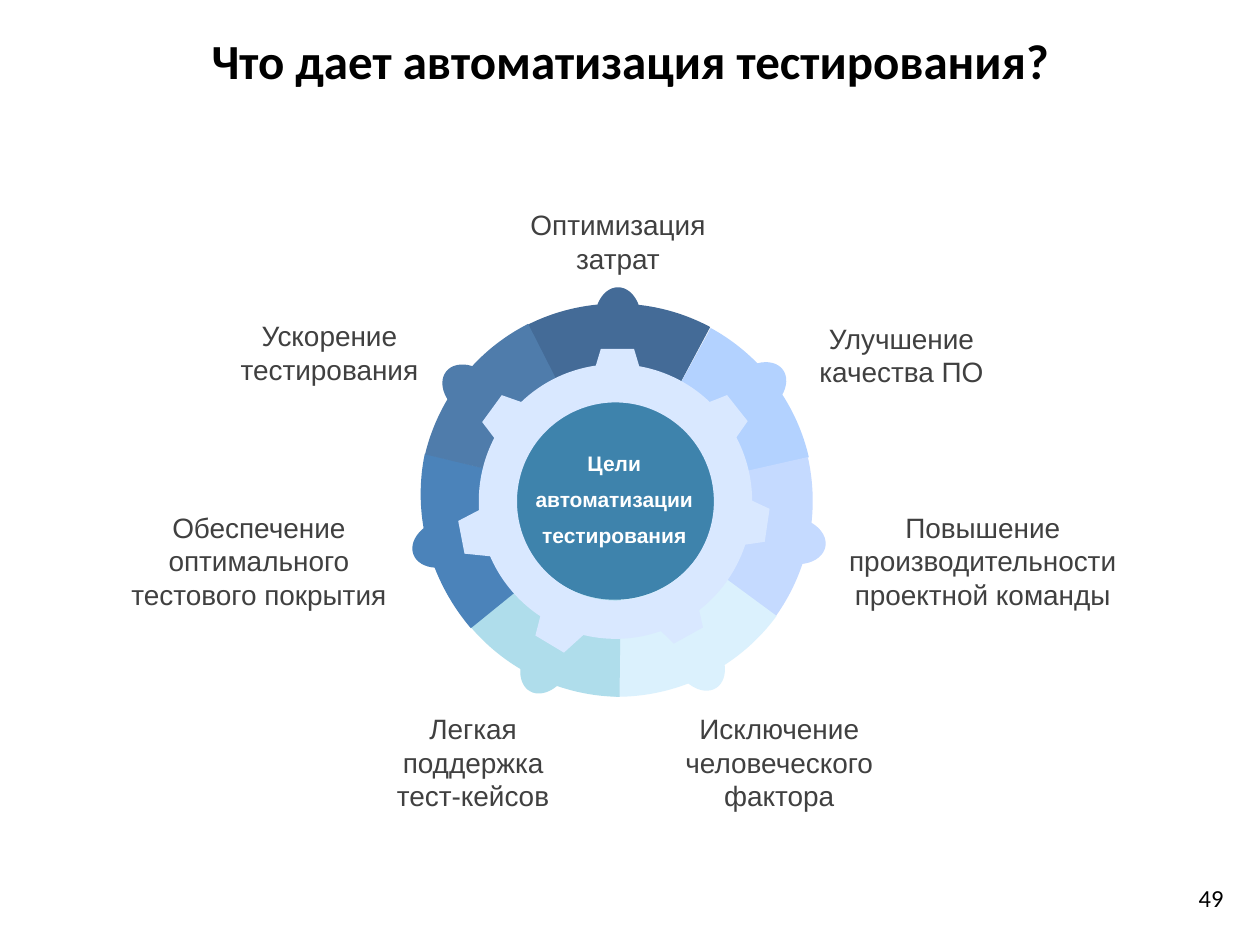
import collections

import pptx
import pptx.dml.color
import pptx.enum.shapes
import pptx.enum.text
import pptx.util

Inches = pptx.util.Inches
Pt = pptx.util.Pt
SHAPE = pptx.enum.shapes.MSO_SHAPE
ALIGN = pptx.enum.text.PP_ALIGN
ANCHOR = pptx.enum.text.MSO_ANCHOR
AUTO_SIZE = pptx.enum.text.MSO_AUTO_SIZE

Segment = collections.namedtuple(
    "Segment", "colour knob slice_box slice_angles tooth label label_box")

SEGMENTS = [
    Segment("446B97", (4.72, 2.28, 0), (3.32, 2.41, 3.15, 3.15, 22.6), (220.01, 275.49),
            (4.69, 2.77, 0), "Оптимизация затрат", (4.02, 1.6, 1.77, 0.64)),
    Segment("B3D2FF", (5.82, 2.83, 52.9), (3.31, 2.41, 3.15, 3.15, 85.3), (213.36, 261.63),
            (5.54, 3.19, 51.6), "Улучшение\nкачества ПО", (6.27, 2.5, 1.77, 0.64)),
    Segment("C5DAFF", (6.11, 4.03, 100.9), (3.3, 2.4, 3.15, 3.15, 133.9), (213.36, 261.63),
            (5.75, 4.02, 98.4), "Повышение\nпроизводительности\nпроектной команды",
            (6.5, 4, 2.6, 0.91)),
    Segment("DBF1FD", (5.36, 4.98, 148.4), (3.32, 2.38, 3.15, 3.15, 189.9), (206.44, 260.99),
            (5.19, 4.8, 151), "Исключение\nчеловеческого фактора", (5.3, 5.6, 1.77, 0.91)),
    Segment("AFDDEB", (4.15, 5, 209.7), (3.36, 2.38, 3.15, 3.15, 254.7), (195.94, 244.75),
            (4.22, 4.87, 211), "Легкая поддержка\nтест-кейсов", (2.87, 5.6, 1.77, 0.91)),
    Segment("4B83BA", (3.34, 4.05, 249.9), (3.39, 2.34, 3.15, 3.3, 305), (195.94, 248.75),
            (3.58, 4.11, 259.1), "Обеспечение\nоптимального\nтестового покрытия",
            (0.91, 4, 2.29, 0.91)),
    Segment("4F7CAB", (3.56, 2.85, 308.6), (3.33, 2.4, 3.15, 3.15, 350.6), (202.96, 252.47),
            (3.8, 3.19, 306.1), "Ускорение\nтестирования", (1.73, 2.48, 1.77, 0.64)),
]
GEAR_COLOUR = "D9E8FF"
CORE_COLOUR = "3E83AC"
KNOB_SIZE = (0.37, 0.52)
TOOTH_SIZE = (0.42, 0.26)
ADJUSTMENT_PER_DEGREE = 0.6

TITLE_FONT = {"name": "Calibri", "size": Pt(28), "bold": True}
NUMBER_FONT = {"name": "Calibri", "size": Pt(14)}
CORE_FONT = {"name": "Arial", "size": Pt(12), "bold": True}
LABEL_FONT = {"name": "Arial", "size": Pt(16)}


def rgb(colour):
    return pptx.dml.color.RGBColor.from_string(colour)


def set_attributes(target, values):
    for name, value in values.items():
        setattr(target, name, value)


def write_text(text_frame, lines, font, colour, first=None, following=None):
    for index, line in enumerate(lines):
        paragraph = text_frame.add_paragraph() if index else text_frame.paragraphs[0]
        paragraph.text = line
        paragraph.alignment = ALIGN.CENTER
        set_attributes(paragraph, (following if index else first) or {})
        for run in paragraph.runs:
            set_attributes(run.font, font)
            run.font.color.rgb = rgb(colour)


def add_text(shapes, box, lines, font, colour, first=None, following=None):
    shape = shapes.add_textbox(*map(Inches, box))
    set_attributes(shape.text_frame,
                   {"word_wrap": True, "auto_size": AUTO_SIZE.SHAPE_TO_FIT_TEXT})
    write_text(shape.text_frame, lines, font, colour, first, following)


def add_part(shapes, kind, box, colour, rotation=0, adjustments=()):
    shape = shapes.add_shape(kind, *map(Inches, box))
    shape.shadow.inherit = False
    shape.rotation = rotation
    shape.fill.solid()
    shape.fill.fore_color.rgb = rgb(colour)
    shape.line.fill.background()
    for index, value in enumerate(adjustments):
        shape.adjustments[index] = value


def add_title(slide):
    title = slide.shapes.title
    set_attributes(title, {"left": Inches(0), "top": Inches(0.02),
                           "width": Inches(10), "height": Inches(1)})
    set_attributes(title.text_frame, {"word_wrap": True, "auto_size": AUTO_SIZE.NONE,
                                      "vertical_anchor": ANCHOR.MIDDLE})
    write_text(title.text_frame, ["Что дает автоматизация тестирования?"],
               TITLE_FONT, "000000", {"line_spacing": 0.8})


def add_wheel(slide):
    shapes = slide.shapes.add_group_shape().shapes
    for segment in SEGMENTS:
        left, top, rotation = segment.knob
        add_part(shapes, SHAPE.OVAL, (left, top, *KNOB_SIZE), segment.colour, rotation)
    for segment in SEGMENTS:
        *box, rotation = segment.slice_box
        angles = [angle * ADJUSTMENT_PER_DEGREE for angle in segment.slice_angles]
        add_part(shapes, SHAPE.PIE, box, segment.colour, rotation, angles)
    add_part(shapes, SHAPE.OVAL, (4.08, 3.16, 1.6, 1.6), CORE_COLOUR)
    add_text(shapes, (4.12, 3.53, 1.51, 0.88), ["Цели", "автоматизации", "тестирования"],
             CORE_FONT, "FFFFFF", {"space_after": Pt(3)},
             {"space_before": Pt(3), "space_after": Pt(3)})
    for segment in SEGMENTS:
        left, top, rotation = segment.tooth
        add_part(shapes, SHAPE.TRAPEZOID, (left, top, *TOOTH_SIZE), GEAR_COLOUR,
                 rotation, [0.3])
    add_part(shapes, SHAPE.DONUT, (3.8, 2.89, 2.17, 2.18), GEAR_COLOUR, 0, [0.14])


def main():
    presentation = pptx.Presentation()
    presentation.slide_width = Inches(10)
    presentation.slide_height = Inches(7.5)
    slide = presentation.slides.add_slide(presentation.slide_layouts[5])
    add_title(slide)
    add_wheel(slide)
    for segment in SEGMENTS:
        add_text(slide.shapes, segment.label_box, [segment.label], LABEL_FONT, "404040")
    add_text(slide.shapes, (7.48, 6.96, 2.33, 0.52), ["49"], NUMBER_FONT, "000000",
             {"alignment": ALIGN.RIGHT})
    presentation.save("out.pptx")


if __name__ == "__main__":
    main()
